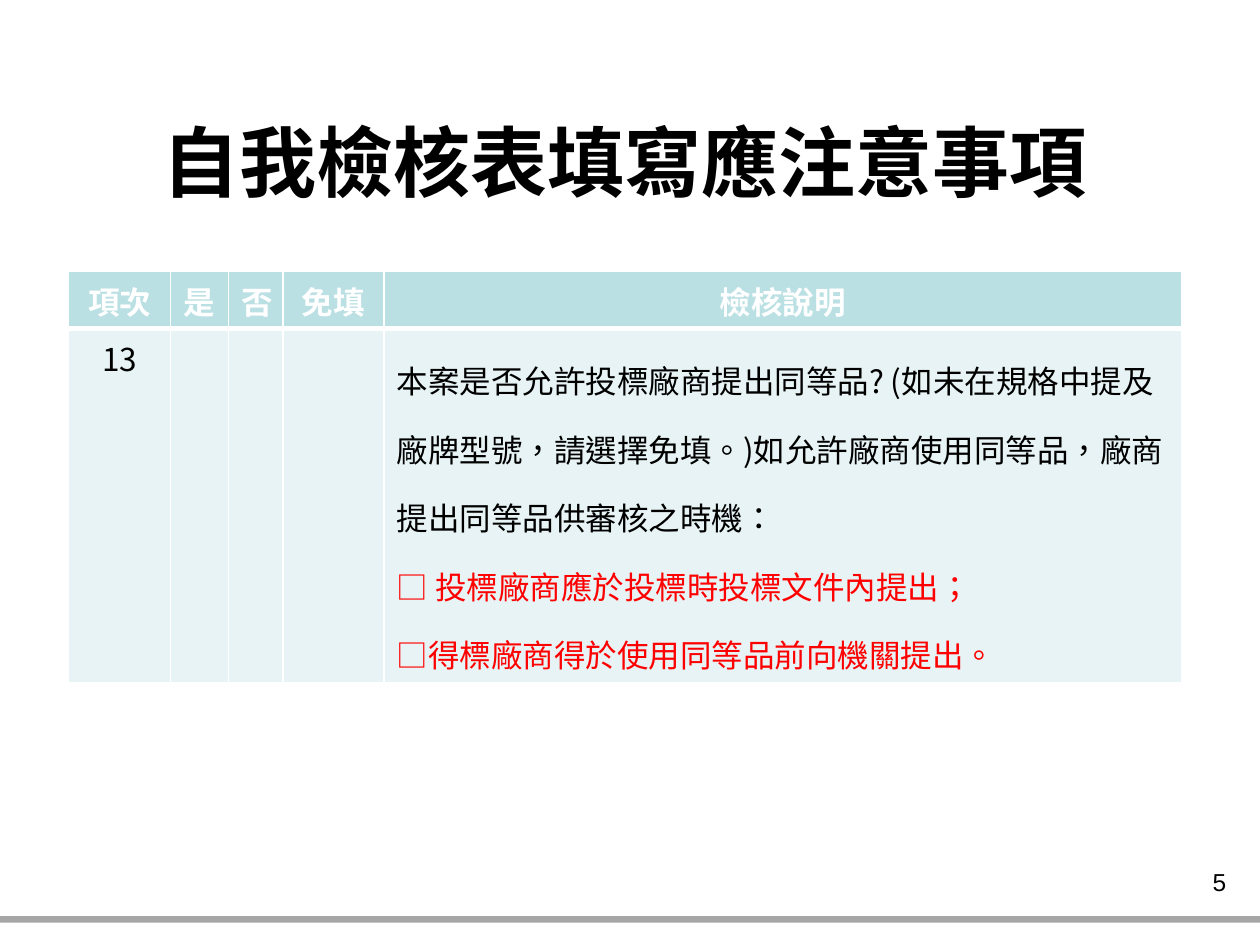
from dataclasses import dataclass

from lxml.etree import SubElement
from pptx import Presentation
from pptx.dml.color import RGBColor
from pptx.enum.shapes import MSO_SHAPE as Shape
from pptx.enum.text import MSO_ANCHOR as Anchor, PP_ALIGN as Align
from pptx.oxml.ns import qn
from pptx.util import Cm, Pt


@dataclass(frozen=True)
class Theme:
    font: str = "Noto Sans CJK SC"
    number_font: str = "Arial"
    language: str = "zh-TW"
    title_size: int = 44
    table_size: int = 18
    number_size: int = 14
    black: str = "000000"
    white: str = "FFFFFF"
    red: str = "FF0000"
    header: str = "BBE0E3"
    body: str = "E7F3F4"
    footer: str = "A6A6A6"
    thin_border: int = 1
    header_border: int = 3


class SlideBuilder:
    def __init__(self, slide, theme):
        self.slide = slide
        self.theme = theme

    def style(self, paragraph, size, color, align, bold=False, font=None):
        paragraph.alignment = align
        name = font or self.theme.font
        for run in paragraph.runs:
            run.font.name = name
            run.font.size = Pt(size)
            run.font.bold = bold
            run.font.color.rgb = RGBColor.from_string(color)
            properties = run.font._element
            properties.set("lang", self.theme.language)
            SubElement(properties, qn("a:ea"), typeface=name)

    def bar(self, left, top, width, height, color):
        shape = self.slide.shapes.add_shape(
            Shape.RECTANGLE, Cm(left), Cm(top), Cm(width), Cm(height))
        shape.shadow.inherit = False
        shape.fill.solid()
        shape.fill.fore_color.rgb = RGBColor.from_string(color)
        shape.line.fill.background()

    def text(self, text, left, top, width, height, size, align,
             anchor=Anchor.TOP, bold=False, font=None):
        box = self.slide.shapes.add_textbox(Cm(left), Cm(top), Cm(width), Cm(height))
        text_frame = box.text_frame
        text_frame.word_wrap = True
        text_frame.vertical_anchor = anchor
        text_frame.text = text
        self.style(text_frame.paragraphs[0], size, self.theme.black, align, bold, font)

    def cell(self, cell, fill, top_border, bottom_border):
        thin = self.theme.thin_border
        properties = cell._tc.get_or_add_tcPr()
        borders = {"a:lnL": thin, "a:lnR": thin, "a:lnT": top_border, "a:lnB": bottom_border}
        for tag, width in borders.items():
            line = SubElement(properties, qn(tag), w=str(Pt(width)))
            solid = SubElement(line, qn("a:solidFill"))
            SubElement(solid, qn("a:srgbClr"), val=self.theme.white)
        cell.fill.solid()
        cell.fill.fore_color.rgb = RGBColor.from_string(fill)

    def checklist(self, left, top, widths, heights, headings, number, notes):
        theme = self.theme
        frame = self.slide.shapes.add_table(
            len(heights), len(widths), Cm(left), Cm(top), Cm(sum(widths)), Cm(sum(heights)))
        table = frame.table
        for row, height in zip(table.rows, heights):
            row.height = Cm(height)

        # Header row and empty answer cells
        for index, (width, heading) in enumerate(zip(widths, headings)):
            table.columns[index].width = Cm(width)
            header, answer = table.cell(0, index), table.cell(1, index)
            header.text_frame.text = heading
            self.style(header.text_frame.paragraphs[0], theme.table_size,
                       theme.white, Align.CENTER, bold=True)
            self.cell(header, theme.header, theme.thin_border, theme.header_border)
            self.cell(answer, theme.body, theme.header_border, theme.thin_border)

        # Item number
        number_frame = table.cell(1, 0).text_frame
        number_frame.text = number
        self.style(number_frame.paragraphs[0], theme.table_size, theme.black, Align.CENTER)

        # Explanation, one paragraph per note
        notes_frame = table.cell(1, len(widths) - 1).text_frame
        notes_frame.text = "\n".join(note for note, _ in notes)
        for paragraph, (_, color) in zip(notes_frame.paragraphs, notes):
            paragraph.line_spacing = 1.5
            self.style(paragraph, theme.table_size, color, Align.LEFT)


def main():
    presentation = Presentation()
    presentation.slide_width, presentation.slide_height = Cm(25.4), Cm(19.05)
    theme = Theme()
    slide = presentation.slides.add_slide(presentation.slide_layouts[6])
    builder = SlideBuilder(slide, theme)

    # Footer bar and page number
    builder.bar(-0.02, 18.47, 25.45, 0.13, theme.footer)
    builder.text("5", 19.05, 17.35, 5.92, 1.32, theme.number_size, Align.RIGHT,
                 font=theme.number_font)

    # Checklist table
    builder.checklist(
        1.38, 5.47, [2.06, 1.17, 1.09, 2.04, 16.08], [1.15, 7.15],
        ["項次", "是", "否", "免填", "檢核說明"],
        "13",
        [
            ("本案是否允許投標廠商提出同等品? (如未在規格中提及廠牌型號，請選擇免填。)"
             "如允許廠商使用同等品，廠商提出同等品供審核之時機：", theme.black),
            ("□ 投標廠商應於投標時投標文件內提出；", theme.red),
            ("□得標廠商得於使用同等品前向機關提出。", theme.red),
        ])

    # Title
    builder.text("自我檢核表填寫應注意事項", 1.7, 2.24, 21.8, 2, theme.title_size,
                 Align.CENTER, Anchor.MIDDLE, bold=True)

    presentation.save("out.pptx")


if __name__ == "__main__":
    main()
